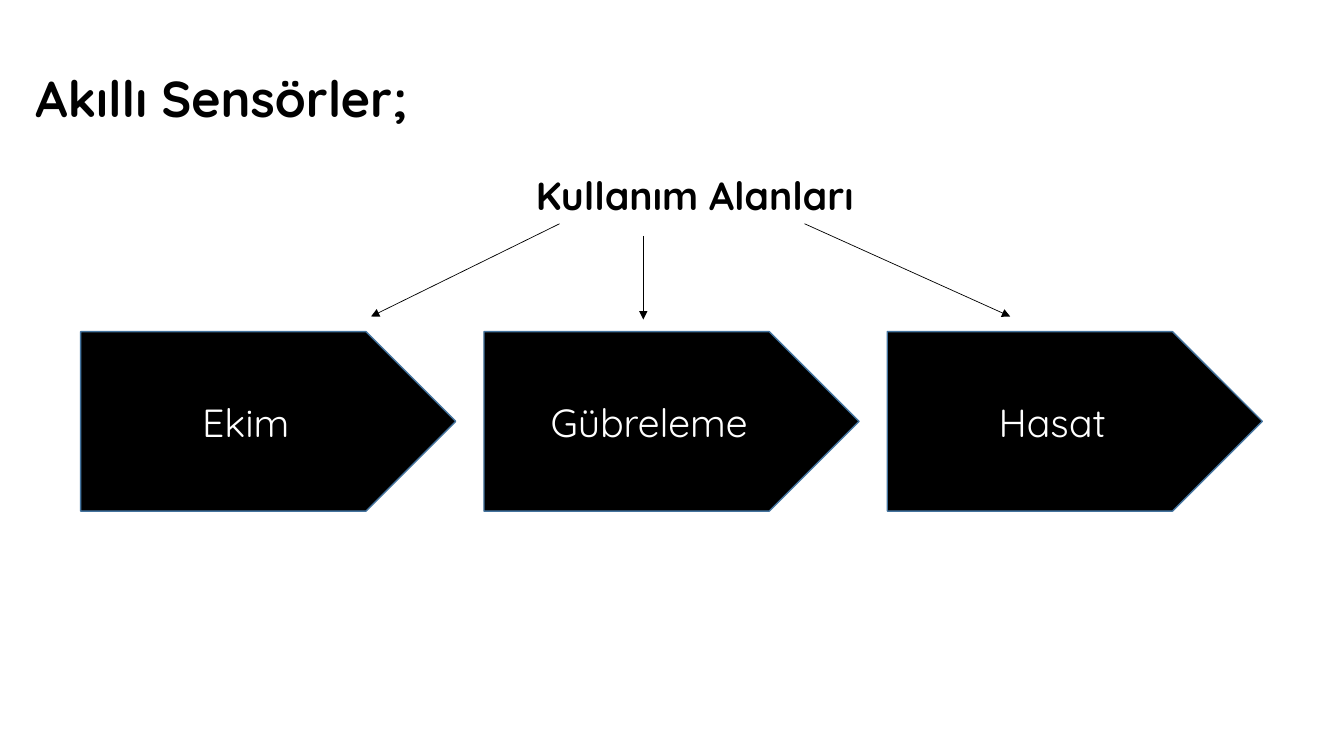
from dataclasses import dataclass

from lxml import etree
from pptx import Presentation
from pptx.dml.color import RGBColor
from pptx.enum.shapes import MSO_CONNECTOR, MSO_SHAPE
from pptx.enum.text import MSO_ANCHOR, MSO_AUTO_SIZE, PP_ALIGN
from pptx.oxml.ns import qn
from pptx.util import Inches, Pt

PLATE = MSO_SHAPE.PENTAGON
STRAIGHT = MSO_CONNECTOR.STRAIGHT
MIDDLE = MSO_ANCHOR.MIDDLE
TOP = MSO_ANCHOR.TOP
LEFT = PP_ALIGN.LEFT
CENTER = PP_ALIGN.CENTER
NO_FIT = MSO_AUTO_SIZE.NONE
GROW = MSO_AUTO_SIZE.SHAPE_TO_FIT_TEXT


@dataclass(frozen=True)
class Theme:
    font: str = "Quicksand"
    dark: RGBColor = RGBColor.from_string("000000")
    light: RGBColor = RGBColor.from_string("FFFFFF")
    edge: RGBColor = RGBColor.from_string("43739E")
    title: int = 36
    body: int = 28
    border: float = 1
    arrow: float = 0.5


class Board:
    def __init__(self, slide, theme):
        self.slide = slide
        self.theme = theme

    def style(self, shape, text, size, color, bold, align, anchor, fit=NO_FIT):
        frame = shape.text_frame
        frame.text = text
        frame.word_wrap = True
        frame.auto_size = fit
        frame.vertical_anchor = anchor
        line = frame.paragraphs[0]
        line.alignment = align
        font = line.runs[0].font
        font.name = self.theme.font
        font.size = Pt(size)
        font.bold = bold
        font.color.rgb = color
        return line

    def title(self, text, x, y, w, h):
        shape = self.slide.shapes.title
        shape.left, shape.top = Inches(x), Inches(y)
        shape.width, shape.height = Inches(w), Inches(h)
        line = self.style(shape, text, self.theme.title, self.theme.dark,
                          True, LEFT, MIDDLE)
        line.line_spacing = 0.9
        line.space_before = Pt(0)

    def label(self, text, x, y, w, h):
        shape = self.slide.shapes.add_textbox(
            Inches(x), Inches(y), Inches(w), Inches(h))
        self.style(shape, text, self.theme.body, self.theme.dark,
                   True, CENTER, TOP, GROW)

    def plate(self, text, x, y, w, h):
        shape = self.slide.shapes.add_shape(
            PLATE, Inches(x), Inches(y), Inches(w), Inches(h))
        shape.shadow.inherit = False
        shape.fill.solid()
        shape.fill.fore_color.rgb = self.theme.dark
        shape.line.color.rgb = self.theme.edge
        shape.line.width = Pt(self.theme.border)
        self.style(shape, text, self.theme.body, self.theme.light,
                   False, CENTER, MIDDLE)

    def arrow(self, x1, y1, x2, y2):
        link = self.slide.shapes.add_connector(
            STRAIGHT, Inches(x1), Inches(y1), Inches(x2), Inches(y2))
        link.line.color.rgb = self.theme.dark
        link.line.width = Pt(self.theme.arrow)
        props = link._element.spPr
        tail = etree.SubElement(props.find(qn("a:ln")), qn("a:tailEnd"))
        tail.set("type", "triangle")
        etree.SubElement(props, qn("a:effectLst"))


def main():
    deck = Presentation()
    deck.slide_width, deck.slide_height = Inches(13.33), Inches(7.5)
    slide = deck.slides.add_slide(deck.slide_layouts[5])
    board = Board(slide, Theme())

    board.title("Akıllı Sensörler;", 0.25, 0.28, 11.5, 1.45)
    for i, name in enumerate(("Ekim", "Gübreleme", "Hasat")):
        board.plate(name, 0.8 + i * 4, 3.29, 3.72, 1.78)
    board.label("Kullanım Alanları", 4.35, 1.65, 5.08, 0.57)
    board.arrow(5.55, 2.22, 3.68, 3.14)
    board.arrow(6.38, 2.34, 6.38, 3.17)
    board.arrow(7.98, 2.22, 10.02, 3.14)

    deck.save("out.pptx")


if __name__ == "__main__":
    main()
